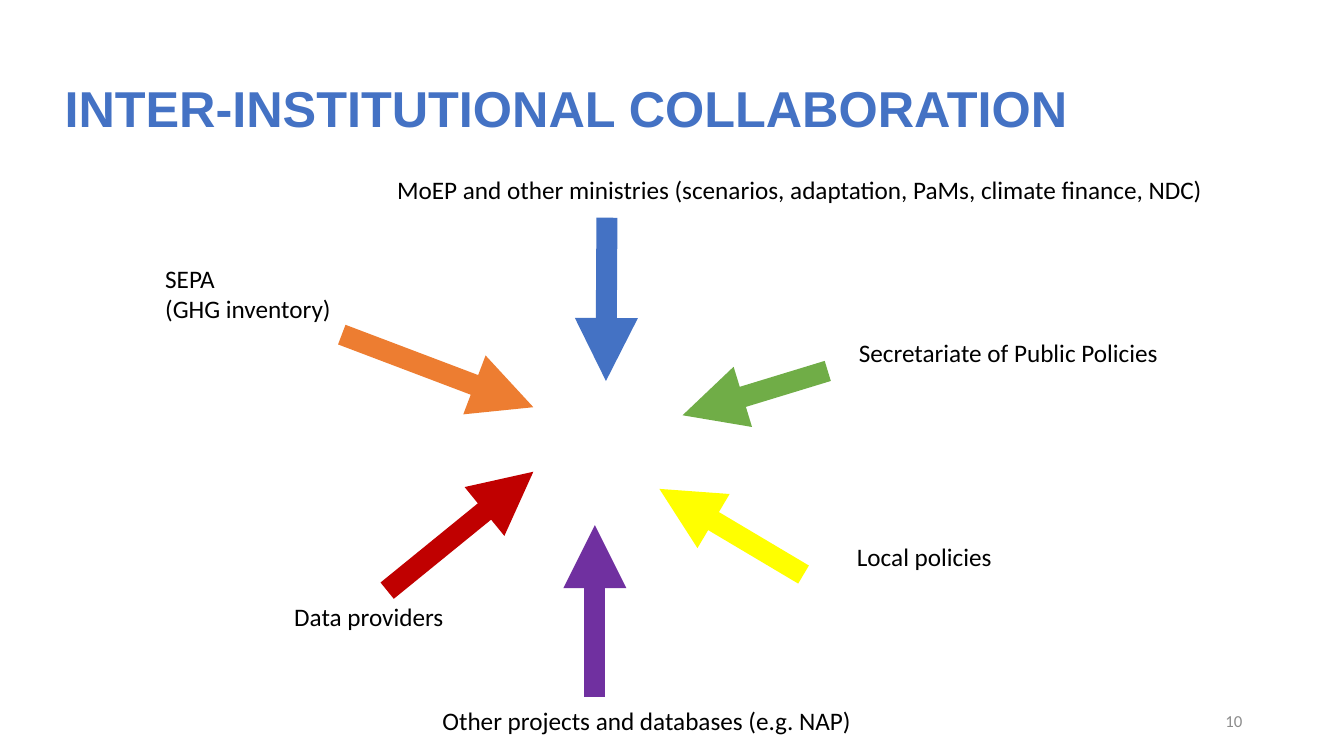
from dataclasses import dataclass

from lxml.etree import SubElement
from pptx import Presentation
from pptx.dml.color import RGBColor as Rgb
from pptx.enum.shapes import MSO_CONNECTOR as Link
from pptx.enum.text import MSO_ANCHOR as Anchor, MSO_AUTO_SIZE as Fit, PP_ALIGN as Align
from pptx.oxml.ns import qn
from pptx.util import Inches, Pt


@dataclass(frozen=True)
class Theme:
    """Colours, fonts and sizes of the slide."""
    blue: str = "4472C4"
    orange: str = "ED7D31"
    green: str = "70AD47"
    yellow: str = "FFFF00"
    purple: str = "7030A0"
    red: str = "C00000"
    ink: str = "000000"
    gray: str = "8C8C8C"
    head: str = "Arial"
    body: str = "Calibri"
    title: int = 36
    label: int = 18
    small: int = 12
    arrow: int = 15


LOOK = Theme()
PARTNERS = [
    ("Data providers", (2.82, 5.92, 1.7, 0.4), (3.84, 5.86), (5.29, 4.68), LOOK.red),
    ("SEPA\n(GHG inventory)", (1.54, 2.56, 1.86, 0.71), (3.39, 3.32), (5.29, 4.04), LOOK.orange),
    ("MoEP and other ministries (scenarios, adaptation, PaMs, climate finance, NDC)",
     (3.84, 1.68, 8.28, 0.4), (6.02, 2.16), (6.01, 3.78), LOOK.blue),
    ("Secretariate of Public Policies", (8.42, 3.3, 3.2, 0.4), (8.21, 3.68), (6.77, 4.12), LOOK.green),
    ("Local policies", (8.4, 5.32, 1.55, 0.4), (7.97, 5.7), (6.54, 4.85), LOOK.yellow),
    ("Other projects and databases (e.g. NAP)", (4.29, 6.95, 4.3, 0.4), (5.9, 6.91), (5.9, 5.21), LOOK.purple),
]


def style(para, face, size, color, bold=False):
    """Set the font of a paragraph."""
    font = para.font
    font.name, font.size, font.bold = face, Pt(size), bold
    font.color.rgb = Rgb.from_string(color)


def add_title(slide, box, text):
    """Place the title placeholder in its box."""
    title = slide.shapes.title
    title.left, title.top, title.width, title.height = map(Inches, box)
    frame = title.text_frame
    frame.margin_left = frame.margin_top = frame.margin_right = frame.margin_bottom = 0
    frame.vertical_anchor, frame.auto_size, frame.word_wrap = Anchor.TOP, Fit.NONE, True
    frame.text = text
    para = frame.paragraphs[0]
    para.alignment, para.line_spacing = Align.LEFT, 0.9
    style(para, LOOK.head, LOOK.title, LOOK.blue, True)


def add_label(slide, box, text):
    """Write a partner's name on unwrapped lines."""
    frame = slide.shapes.add_textbox(*map(Inches, box)).text_frame
    frame.word_wrap, frame.auto_size = False, Fit.SHAPE_TO_FIT_TEXT
    frame.text = text
    for para in frame.paragraphs:
        style(para, LOOK.body, LOOK.label, LOOK.ink)


def add_arrow(slide, start, end, color):
    """Draw a thick arrow from start to end."""
    arrow = slide.shapes.add_connector(Link.STRAIGHT, *map(Inches, start + end))
    arrow.line.width = Pt(LOOK.arrow)
    arrow.line.color.rgb = Rgb.from_string(color)
    SubElement(arrow.line._get_or_add_ln(), qn("a:tailEnd"), type="triangle")
    SubElement(arrow._element.spPr, qn("a:effectLst"))


def add_number(slide, box, text):
    """Write the page number at the right of its box."""
    frame = slide.shapes.add_textbox(*map(Inches, box)).text_frame
    frame.word_wrap, frame.vertical_anchor = True, Anchor.MIDDLE
    frame.text = text
    para = frame.paragraphs[0]
    para.alignment = Align.RIGHT
    style(para, LOOK.body, LOOK.small, LOOK.gray)


def main():
    """Build and save the slide."""
    deck = Presentation()
    deck.slide_width, deck.slide_height = Inches(13.33), Inches(7.5)
    slide = deck.slides.add_slide(deck.slide_layouts[5])
    add_title(slide, (0.64, 0.83, 10.05, 1.02), "INTER-INSTITUTIONAL COLLABORATION")
    add_number(slide, (9.42, 6.95, 3, 0.4), "10")
    for text, box, start, end, color in PARTNERS:
        add_arrow(slide, start, end, color)
        add_label(slide, box, text)
    deck.save("out.pptx")


if __name__ == "__main__":
    main()
